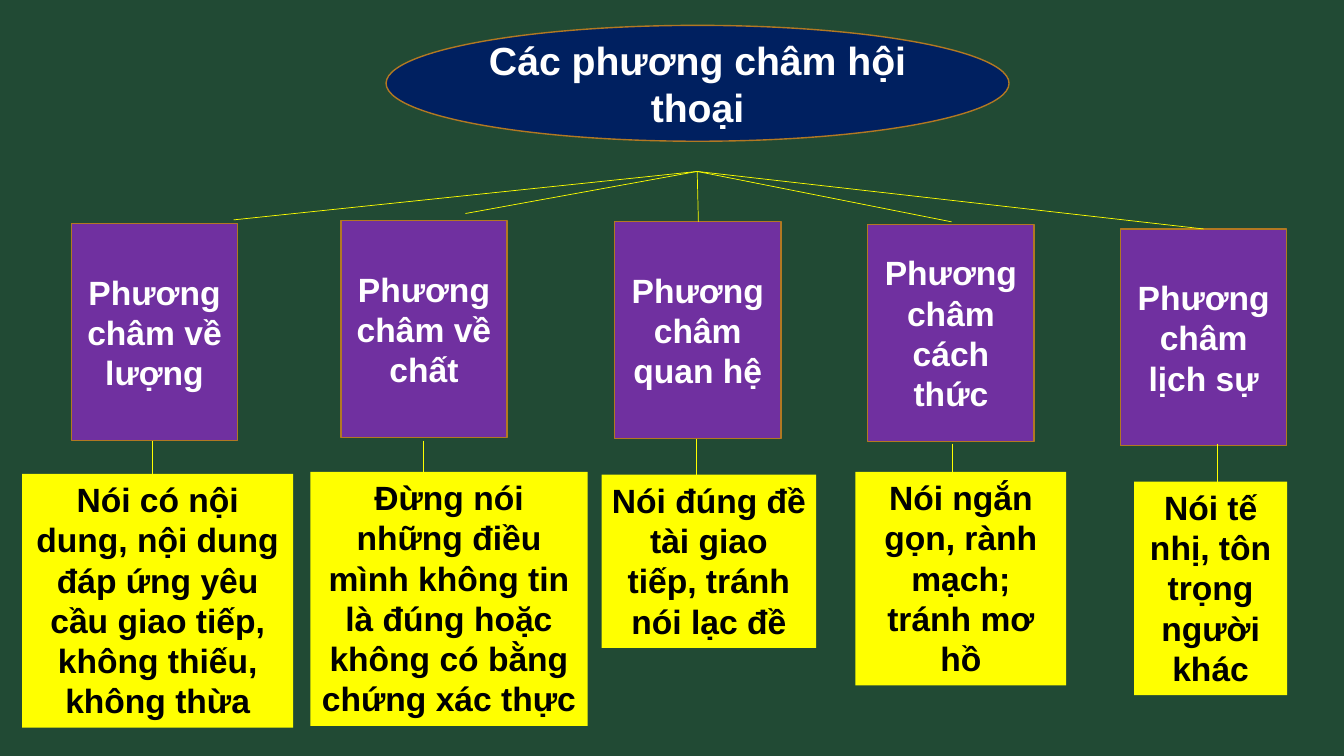
from dataclasses import dataclass
from lxml.etree import SubElement
from pptx import Presentation
from pptx.dml.color import RGBColor
from pptx.enum.shapes import MSO_CONNECTOR, MSO_SHAPE
from pptx.enum.text import MSO_ANCHOR, MSO_AUTO_SIZE, PP_ALIGN
from pptx.oxml.ns import qn
from pptx.util import Cm, Pt

TITLE = "Các phương châm hội thoại"
TITLE_FRAME = (9.73, 0.64, 15.7, 2.92)
MAXIM_SIZE = (4.19, 5.46)
HUB = (17.57, 4.32)
STEM_LENGTH = 1.32

BRANCHES = [
    {"maxim": "Phương châm về lượng", "corner": (1.8, 5.64),
     "ray_end": (5.89, 5.54), "stem": (3.84, 11.1),
     "advice": "Nói có nội dung, nội dung đáp ứng yêu cầu giao tiếp, không thiếu, không thừa",
     "advice_frame": (0.56, 11.94, 6.83, 6.4)},
    {"maxim": "Phương châm về chất", "corner": (8.59, 5.56),
     "ray_end": (11.73, 5.38), "stem": (10.67, 11.1),
     "advice": "Đừng nói những điều mình không tin là đúng hoặc không có bằng chứng xác thực",
     "advice_frame": (7.82, 11.89, 6.99, 6.4)},
    {"maxim": "Phương châm quan hệ", "corner": (15.49, 5.59),
     "ray_end": (17.6, 5.59), "stem": (17.55, 11.05),
     "advice": "Nói đúng đề tài giao tiếp, tránh nói lạc đề",
     "advice_frame": (15.16, 11.96, 5.41, 4.37)},
    {"maxim": "Phương châm cách thức", "corner": (21.87, 5.66),
     "ray_end": (23.98, 5.59), "stem": (24.0, 11.18),
     "advice": "Nói ngắn gọn, rành mạch; tránh mơ hồ",
     "advice_frame": (21.56, 11.89, 5.31, 5.38)},
    {"maxim": "Phương châm lịch sự", "corner": (28.24, 5.77),
     "ray_end": (30.33, 5.77), "stem": (30.68, 11.18),
     "advice": "Nói tế nhị, tôn trọng người khác",
     "advice_frame": (28.58, 12.14, 3.86, 5.38)},
]


@dataclass(frozen=True)
class Theme:
    background: str = "214A34"
    title_fill: str = "002060"
    maxim_fill: str = "7030A0"
    yellow: str = "FFFF00"
    outline: str = "B27822"
    light_text: str = "FFFFFF"
    dark_text: str = "000000"
    font: str = "Arial"
    title_size: int = 28
    body_size: int = 24
    outline_width: float = 1
    line_width: float = 0.5


THEME = Theme()


def color(value):
    return RGBColor.from_string(value)


def add_box(page, kind, frame, words, fill, text_color, size, outlined=True):
    box = page.shapes.add_shape(kind, *map(Cm, frame))
    box.shadow.inherit = False
    box.fill.solid()
    box.fill.fore_color.rgb = color(fill)
    if outlined:
        box.line.color.rgb = color(THEME.outline)
        box.line.width = Pt(THEME.outline_width)
    else:
        box.line.fill.background()
    text_frame = box.text_frame
    text_frame.word_wrap = True
    text_frame.vertical_anchor = MSO_ANCHOR.MIDDLE
    text_frame.text = words
    para = text_frame.paragraphs[0]
    para.alignment = PP_ALIGN.CENTER
    font = para.runs[0].font
    font.name = THEME.font
    font.size = Pt(size)
    font.bold = True
    font.color.rgb = color(text_color)
    return box


def add_line(page, start, end):
    line = page.shapes.add_connector(MSO_CONNECTOR.STRAIGHT, *map(Cm, start + end))
    line.line.color.rgb = color(THEME.yellow)
    line.line.width = Pt(THEME.line_width)
    SubElement(line._element.spPr, qn("a:effectLst"))


def add_branch(page, branch):
    add_box(page, MSO_SHAPE.RECTANGLE, branch["corner"] + MAXIM_SIZE, branch["maxim"],
            THEME.maxim_fill, THEME.light_text, THEME.body_size)
    add_line(page, HUB, branch["ray_end"])
    stem_x, stem_top = branch["stem"]
    add_line(page, (stem_x, stem_top), (stem_x, stem_top + STEM_LENGTH))
    advice = add_box(page, MSO_SHAPE.RECTANGLE, branch["advice_frame"], branch["advice"],
                     THEME.yellow, THEME.dark_text, THEME.body_size, outlined=False)
    advice.text_frame.vertical_anchor = MSO_ANCHOR.TOP
    advice.text_frame.auto_size = MSO_AUTO_SIZE.SHAPE_TO_FIT_TEXT


def main():
    deck = Presentation()
    deck.slide_width = Cm(33.87)
    deck.slide_height = Cm(19.05)
    page = deck.slides.add_slide(deck.slide_layouts[6])
    page.background.fill.solid()
    page.background.fill.fore_color.rgb = color(THEME.background)
    for branch in BRANCHES:
        add_branch(page, branch)
    add_box(page, MSO_SHAPE.OVAL, TITLE_FRAME, TITLE,
            THEME.title_fill, THEME.light_text, THEME.title_size)
    deck.save("out.pptx")


if __name__ == "__main__":
    main()
